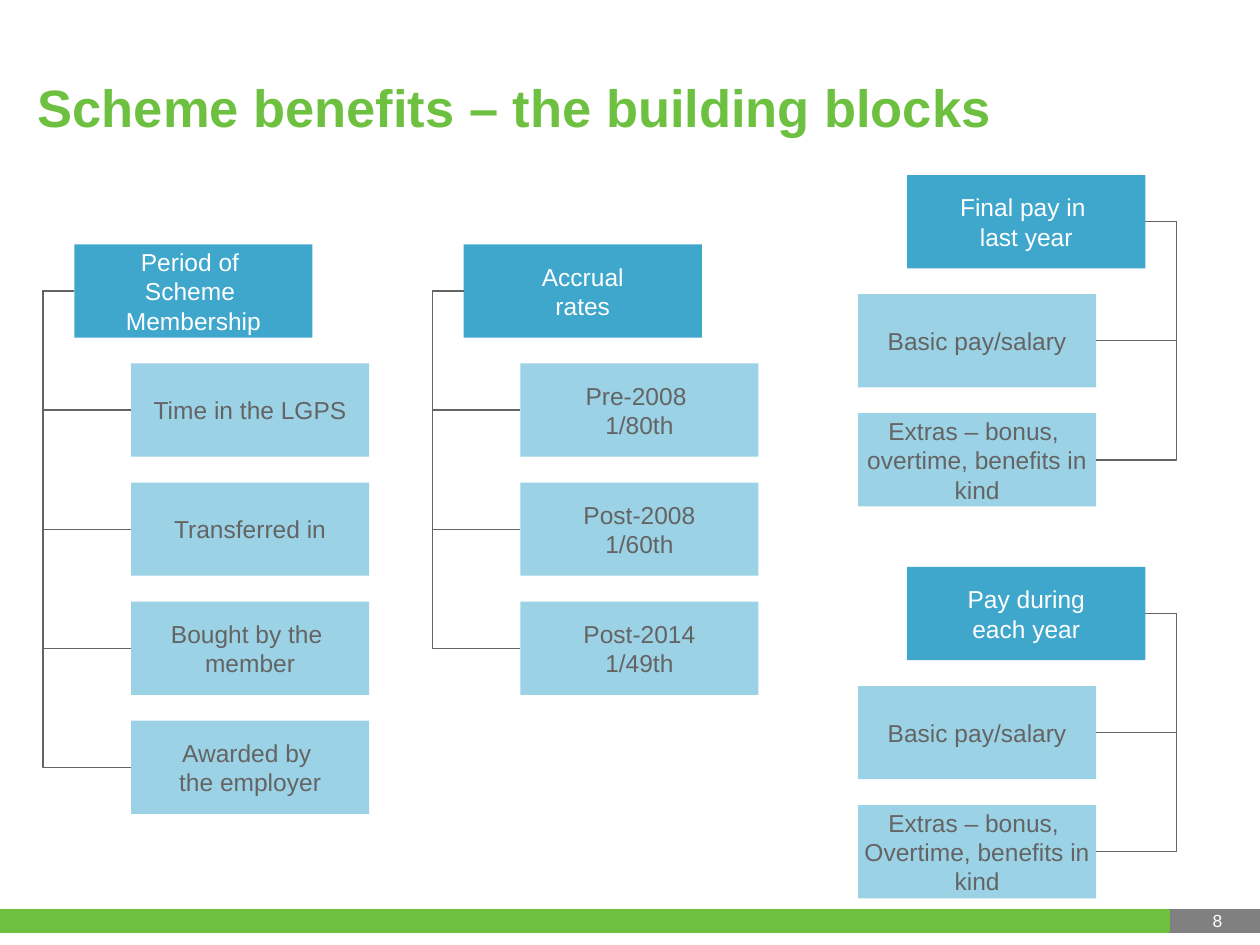
from lxml import etree
from pptx import Presentation
from pptx.dml.color import RGBColor
from pptx.enum.shapes import MSO_CONNECTOR as CONN, MSO_SHAPE as SHAPE
from pptx.enum.text import MSO_ANCHOR as ANCHOR, PP_ALIGN as ALIGN
from pptx.oxml.ns import qn
from pptx.util import Inches, Pt

TITLE = "Scheme benefits – the building blocks"
PAGE = "8"
GREEN, GREY, WHITE = "6EC040", "808080", "FFFFFF"
BLUE, PALE, DARK = "3FA6CC", "9BD2E5", "646464"
BOX_W, BOX_H, STEP = 1.89, 0.74, 0.945
RAIL = 0.25
LEFT_SITE, RIGHT_SITE = 1, 3

GROUPS = [
    {"x": 0.59, "y": 1.94, "indent": 0.45, "site": LEFT_SITE,
     "head": ["Period of ", "Scheme ", "Membership"],
     "items": [["Time in the LGPS"], ["Transferred in"],
               ["Bought by the ", "member"], ["Awarded by ", "the employer"]]},
    {"x": 3.68, "y": 1.94, "indent": 0.45, "site": LEFT_SITE,
     "head": ["Accrual", "rates"],
     "items": [["Pre-2008 ", "1/80th"], ["Post-2008", "1/60th"],
               ["Post-2014", "1/49th"]]},
    {"x": 7.2, "y": 1.39, "indent": -0.39, "site": RIGHT_SITE,
     "head": ["Final pay in ", "last year"],
     "items": [["Basic pay/salary"],
               ["Extras – bonus, ", "overtime, benefits in", "kind"]]},
    {"x": 7.2, "y": 4.5, "indent": -0.39, "site": RIGHT_SITE,
     "head": ["Pay during", "each year"],
     "items": [["Basic pay/salary"],
               ["Extras – bonus, ", "Overtime, benefits in", "kind"]]},
]


def rgb(value):
    return RGBColor.from_string(value)


def write(tf, lines, size, color, align, bold=False):
    for i, line in enumerate(lines):
        p = tf.paragraphs[0] if i == 0 else tf.add_paragraph()
        p.alignment = align
        r = p.add_run()
        r.text = line
        r.font.name = "Arial"
        r.font.size = Pt(size)
        r.font.bold = bold
        r.font.color.rgb = rgb(color)


def add_rect(slide, x, y, w, h, fill, line=None):
    sp = slide.shapes.add_shape(SHAPE.RECTANGLE, Inches(x), Inches(y), Inches(w), Inches(h))
    sp.shadow.inherit = False
    sp.fill.solid()
    sp.fill.fore_color.rgb = rgb(fill)
    if line:
        sp.line.color.rgb = rgb(line)
        sp.line.width = Pt(2)
    else:
        sp.line.fill.background()
    return sp


def add_box(slide, x, y, lines, fill, color):
    sp = add_rect(slide, x, y, BOX_W, BOX_H, fill)
    tf = sp.text_frame
    tf.word_wrap = False
    tf.vertical_anchor = ANCHOR.MIDDLE
    write(tf, lines, 14, color, ALIGN.CENTER)
    return sp


def add_elbow(slide, head, item, site, indent):
    cn = slide.shapes.add_connector(CONN.ELBOW, 0, 0, 0, 0)
    cn.begin_connect(head, site)
    cn.end_connect(item, site)
    cn.line.color.rgb = rgb(DARK)
    cn.line.width = Pt(0.75)
    props = cn._element.spPr
    guides = props.find(qn("a:prstGeom")).get_or_add_avLst()
    bend = round(-RAIL / abs(indent) * 100000)
    etree.SubElement(guides, qn("a:gd"), name="adj1", fmla=f"val {bend}")
    etree.SubElement(props, qn("a:effectLst"))


def add_group(slide, group):
    x, y, indent = group["x"], group["y"], group["indent"]
    head = add_box(slide, x, y, group["head"], BLUE, WHITE)
    for i, lines in enumerate(group["items"], 1):
        item = add_box(slide, x + indent, y + i * STEP, lines, PALE, DARK)
        add_elbow(slide, head, item, group["site"], indent)


def add_footer(slide):
    add_rect(slide, 9.17, 7.23, 0.83, 0.16, GREY, GREY)
    add_rect(slide, 0, 7.23, 9.27, 0.16, GREEN, GREEN)
    number = slide.shapes.add_textbox(Inches(9.16), Inches(6.85), Inches(0.64), Inches(0.59))
    tf = number.text_frame
    tf.word_wrap = True
    tf.vertical_anchor = ANCHOR.BOTTOM
    write(tf, [PAGE], 10, WHITE, ALIGN.RIGHT)


def main():
    prs = Presentation()
    prs.slide_width, prs.slide_height = Inches(10), Inches(7.5)
    slide = prs.slides.add_slide(prs.slide_layouts[5])
    add_footer(slide)
    title = slide.shapes.title
    title.left, title.top = Inches(0.2), Inches(0.22)
    title.width, title.height = Inches(9), Inches(1.25)
    title.text_frame.vertical_anchor = ANCHOR.MIDDLE
    write(title.text_frame, [TITLE], 30, GREEN, ALIGN.LEFT, bold=True)
    for group in GROUPS:
        add_group(slide, group)
    prs.save("out.pptx")


if __name__ == "__main__":
    main()
